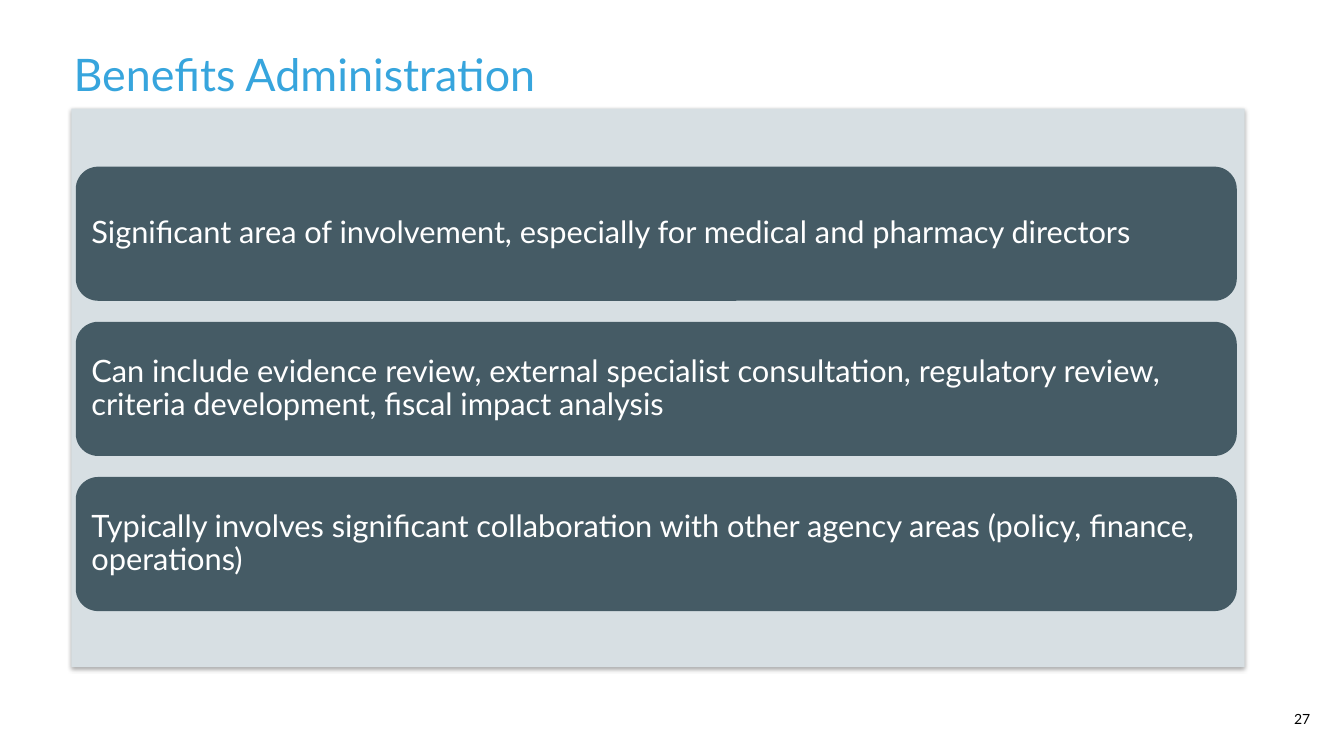
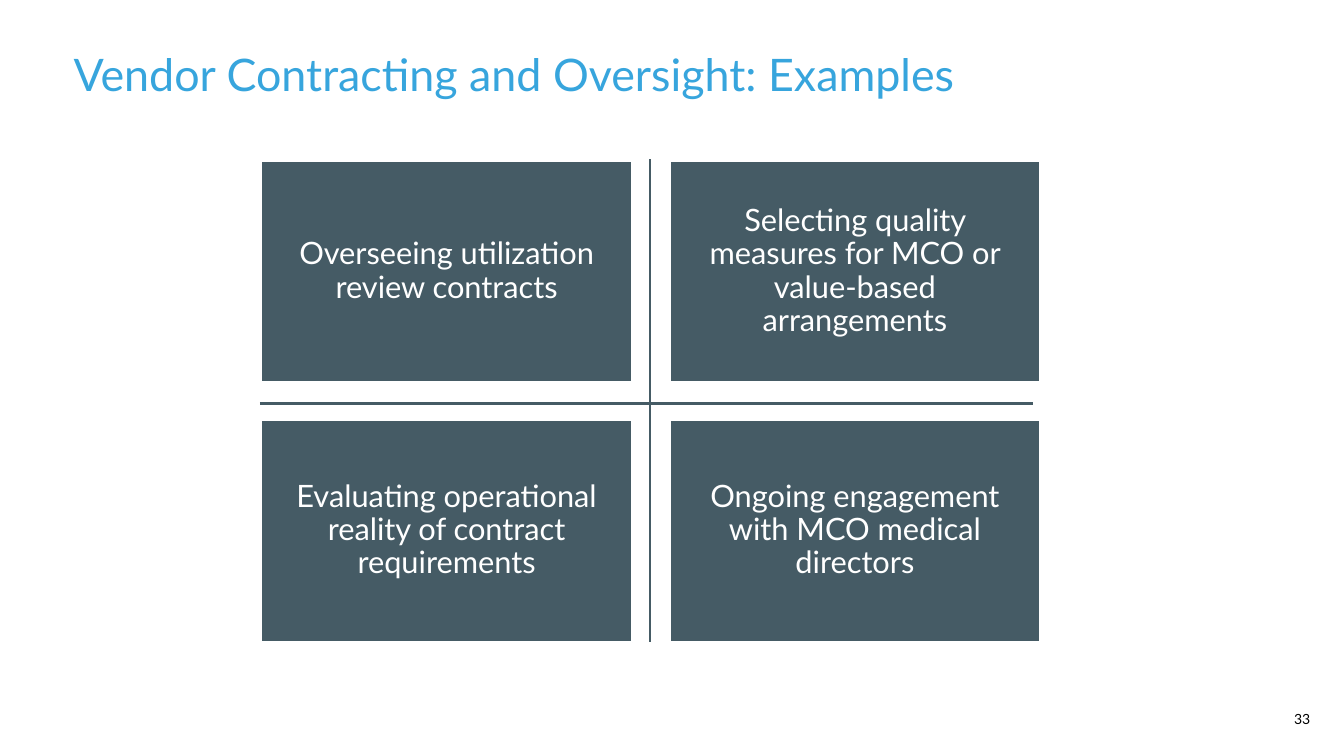
from lxml import etree
from pptx import Presentation
from pptx.dml.color import RGBColor
from pptx.enum import shapes, text
from pptx.oxml import ns
from pptx.util import Cm, Pt

FONT = "Lato"
SKY = RGBColor(0x37, 0xA5, 0xDD)
SLATE = RGBColor(0x45, 0x5B, 0x65)
MIST = RGBColor(0xD7, 0xDF, 0xE3)
WHITE = RGBColor(0xFF, 0xFF, 0xFF)
BLACK = RGBColor(0, 0, 0)

BENEFITS = [
    "Significant area of involvement, especially for medical and pharmacy directors",
    "Can include evidence review, external specialist consultation, regulatory review, "
    "criteria development, fiscal impact analysis",
    "Typically involves significant collaboration with other agency areas "
    "(policy, finance, operations)",
]
EXAMPLES = [
    "Overseeing utilization review contracts",
    "Selecting quality measures for MCO or value-based arrangements",
    "Evaluating operational reality of contract requirements",
    "Ongoing engagement with MCO medical directors",
]


def write(frame, words, size, color, align, spacing=1.0):
    frame.word_wrap = True
    frame.auto_size = text.MSO_AUTO_SIZE.NONE
    frame.vertical_anchor = text.MSO_ANCHOR.MIDDLE
    para = frame.paragraphs[0]
    para.alignment = align
    para.line_spacing = spacing
    span = para.add_run()
    span.text = words
    span.font.name = FONT
    span.font.size = Pt(size)
    span.font.color.rgb = color


def add_page(deck, title, number):
    """Add a title-only slide with its title and page number."""
    page = deck.slides.add_slide(deck.slide_layouts[5])
    heading = page.shapes.title
    heading.left, heading.top = Cm(1.6), Cm(0.84)
    heading.width, heading.height = Cm(29.57), Cm(2.03)
    write(heading.text_frame, title, 32, SKY, text.PP_ALIGN.LEFT)
    box = page.shapes.add_textbox(Cm(32.18), Cm(17.78), Cm(1.27), Cm(0.69))
    write(box.text_frame, str(number), 10, BLACK, text.PP_ALIGN.CENTER)
    return page


def add_block(page, kind, left, top, width, height, fill, outline=None):
    block = page.shapes.add_shape(kind, Cm(left), Cm(top), Cm(width), Cm(height))
    block.shadow.inherit = False
    block.fill.solid()
    block.fill.fore_color.rgb = fill
    if outline is None:
        block.line.fill.background()
    else:
        block.line.color.rgb = outline
        block.line.width = Pt(2)
    return block


def add_panel(page):
    """Add the pale backing rectangle with a soft shadow below it."""
    panel = add_block(page, shapes.MSO_SHAPE.RECTANGLE, 1.8, 2.74, 29.57, 14.07, MIST)
    effects = panel.element.spPr.find(ns.qn("a:effectLst"))
    shadow = etree.SubElement(effects, ns.qn("a:outerShdw"), blurRad=str(Pt(3.1)),
                              dist=str(Pt(1.8)), dir="5400000", rotWithShape="0")
    color = etree.SubElement(shadow, ns.qn("a:srgbClr"), val=str(BLACK))
    etree.SubElement(color, ns.qn("a:alpha"), val="35000")


def add_cards(page, items):
    """Stack full-width rounded cards at an equal pitch."""
    for row, words in enumerate(items):
        card = add_block(page, shapes.MSO_SHAPE.ROUNDED_RECTANGLE,
                         1.91, 4.2 + 3.91 * row, 29.26, 3.38, SLATE)
        frame = card.text_frame
        # The preset insets its text area by about 0.16 cm for the corners.
        frame.margin_left = frame.margin_right = Cm(0.23)
        write(frame, words, 22, WHITE, text.PP_ALIGN.LEFT, 0.9)


def add_rule(page, x1, y1, x2, y2):
    rule = page.shapes.add_connector(shapes.MSO_CONNECTOR.STRAIGHT,
                                     Cm(x1), Cm(y1), Cm(x2), Cm(y2))
    rule.line.color.rgb = SLATE
    rule.line.width = Pt(2)
    etree.SubElement(rule.element.spPr, ns.qn("a:effectLst"))


def add_quadrants(page, items):
    """Place four boxes in two rows of two."""
    for index, words in enumerate(items):
        row, column = divmod(index, 2)
        box = add_block(page, shapes.MSO_SHAPE.RECTANGLE, 6.58 + 10.29 * column,
                        4.04 + 6.53 * row, 9.35, 5.61, SLATE, WHITE)
        frame = box.text_frame
        frame.margin_left = frame.margin_right = Cm(0.23)
        write(frame, words, 22, WHITE, text.PP_ALIGN.CENTER, 0.9)


def main():
    deck = Presentation()
    deck.slide_width, deck.slide_height = Cm(33.87), Cm(19.05)

    page = add_page(deck, "Benefits Administration", 27)
    add_panel(page)
    add_cards(page, BENEFITS)

    page = add_page(deck, "Vendor Contracting and Oversight: Examples", 33)
    add_rule(page, 16.38, 4.01, 16.38, 16.18)
    add_rule(page, 6.55, 10.16, 26.04, 10.16)
    add_quadrants(page, EXAMPLES)

    deck.save("out.pptx")


if __name__ == "__main__":
    main()
